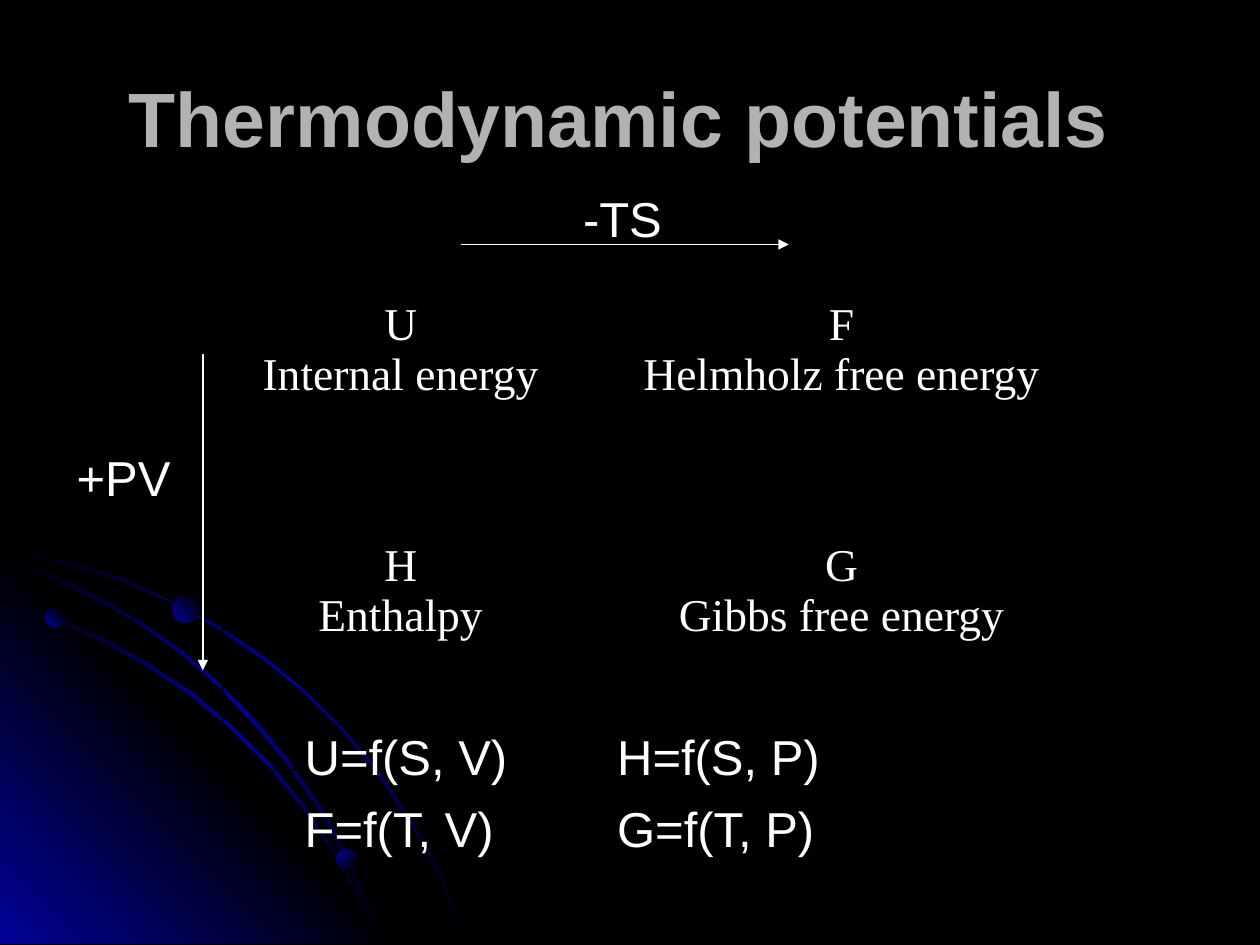
from lxml import etree
from pptx import Presentation
from pptx import util as u
from pptx.dml.color import RGBColor
from pptx.enum import shapes, text
from pptx.oxml import parse_xml
from pptx.oxml.ns import nsdecls, qn

COLUMNS, ROWS = 100, 75
CELL = u.Inches(0.1)
FINE = CELL // 10  # outline points are given in tenths of a grid cell

BLACK, WHITE, GREY, BLUE = "000000", "FFFFFF", "B2B2B2", "010199"
SANS, SERIF = "Arial", "Times New Roman"

OUTER_ARC = [
    (57, 447), (28, 441), (0, 435), (0, 438), (28, 443), (56, 449), (97, 461), (135, 478),
    (173, 499), (208, 523), (241, 549), (271, 579), (298, 612), (323, 649), (337, 673),
    (350, 698), (360, 723), (370, 749), (372, 749), (362, 723), (352, 698), (339, 673),
    (325, 648), (300, 611), (272, 578), (242, 548), (209, 521), (174, 497), (136, 477),
    (98, 459)]
CORNER_GLOW = [(322, 749), (0, 749), (0, 427)]
INNER_ARC = [
    (285, 714), (294, 732), (301, 749), (303, 749), (296, 730), (286, 712), (266, 676),
    (242, 640), (215, 606), (184, 576), (152, 549), (117, 526), (79, 505), (41, 488),
    (0, 475), (0, 477), (39, 490), (77, 507), (115, 528), (150, 551), (183, 578),
    (213, 608), (240, 641), (265, 677)]
MIDDLE_ARC = [
    (0, 442), (0, 444), (36, 457), (74, 475), (109, 494), (142, 518), (173, 544), (202, 575),
    (227, 605), (252, 641), (267, 667), (280, 694), (292, 722), (301, 749), (303, 749),
    (294, 720), (282, 693), (269, 665), (254, 639), (229, 603), (204, 573), (175, 543),
    (144, 516), (111, 493), (76, 473), (39, 455)]


def color(value):
    return RGBColor.from_string(value)


def grid(*lengths):
    return [round(length * CELL) for length in lengths]


class Slide:
    """The deck's style and its current page; lengths are in grid cells."""

    def __init__(self, background):
        self.deck = Presentation()
        self.deck.slide_width, self.deck.slide_height = grid(COLUMNS, ROWS)
        self.page = self.deck.slides.add_slide(self.deck.slide_layouts[6])
        fill = self.page.background.fill
        fill.solid()
        fill.fore_color.rgb = color(background)

    def shade(self, shape, colors, angle):
        """Fill with evenly spaced colours; the angle runs clockwise."""
        step = 100000 // (len(colors) - 1)
        stops = "".join(f'<a:gs pos="{i * step}"><a:srgbClr val="{c}"/></a:gs>'
                        for i, c in enumerate(colors))
        shape.shadow.inherit = False
        shape.line.fill.background()
        shape.fill.background()
        plain = shape._element.spPr.find(qn("a:noFill"))
        plain.getparent().replace(plain, parse_xml(
            f'<a:gradFill {nsdecls("a")}><a:gsLst>{stops}</a:gsLst>'
            f'<a:lin ang="{angle * 60000}" scaled="0"/></a:gradFill>'))

    def outline(self, points, colors, angle):
        builder = self.page.shapes.build_freeform(*points[0], scale=FINE)
        builder.add_line_segments(points[1:], close=True)
        self.shade(builder.convert_to_shape(), colors, angle)

    def dot(self, left, top, size, angle):
        shape = self.page.shapes.add_shape(
            shapes.MSO_SHAPE.OVAL, *grid(left, top, size, size))
        self.shade(shape, [BLUE, BLACK], angle)

    def set_lines(self, frame, lines, font, size, ink=WHITE, bold=False, centred=False):
        frame.text = "\n".join(lines)
        for para in frame.paragraphs:
            para.alignment = text.PP_ALIGN.CENTER if centred else text.PP_ALIGN.LEFT
            for span in para.runs:
                span.font.name, span.font.size = font, u.Pt(size)
                span.font.bold, span.font.color.rgb = bold, color(ink)

    def label(self, place, lines, size=28, middle=False, **style):
        frame = self.page.shapes.add_textbox(*grid(*place)).text_frame
        frame.word_wrap = True
        if middle:
            frame.vertical_anchor = text.MSO_ANCHOR.MIDDLE
        self.set_lines(frame, lines, SANS, size, **style)
        return frame

    def tabbed(self, place, rows, tab, gap):
        """Lines of text in columns, the second one starting at a tab stop."""
        frame = self.label(place, ["\t".join(row) for row in rows])
        for index, para in enumerate(frame.paragraphs):
            if index:
                para.space_before = u.Pt(gap)
            stops = etree.SubElement(para._p.get_or_add_pPr(), qn("a:tabLst"))
            etree.SubElement(stops, qn("a:tab"), pos=str(grid(tab)[0]), algn="l")

    def arrow(self, *ends):
        line = self.page.shapes.add_connector(shapes.MSO_CONNECTOR.STRAIGHT, *grid(*ends))
        line.line.color.rgb, line.line.width = color(WHITE), u.Pt(1)
        properties = line._element.spPr
        etree.SubElement(properties.find(qn("a:ln")), qn("a:tailEnd"), type="triangle")
        etree.SubElement(properties, qn("a:effectLst"))

    def table(self, left, top, widths, heights, content):
        frame = self.page.shapes.add_table(
            len(heights), len(widths), *grid(left, top, sum(widths), sum(heights)))
        table = frame.table
        table.first_row = table.horz_banding = False
        for column, width in zip(table.columns, grid(*widths)):
            column.width = width
        for row, height, entries in zip(table.rows, grid(*heights), content):
            row.height = height
            for cell, lines in zip(row.cells, entries):
                self.set_lines(cell.text_frame, lines, SERIF, 26, centred=True)
                cell.fill.background()
                self.border(cell)

    def border(self, cell):
        properties = cell._tc.get_or_add_tcPr()
        for index, side in enumerate("LRTB"):
            properties.insert(index, parse_xml(
                f'<a:ln{side} {nsdecls("a")} w="{u.Pt(1)}"><a:solidFill>'
                f'<a:srgbClr val="{BLACK}"/></a:solidFill></a:ln{side}>'))


def main():
    slide = Slide(BLACK)

    band = [BLACK, BLUE, BLACK]
    slide.outline(OUTER_ARC, band, 45)
    slide.outline(CORNER_GLOW, [BLUE, BLACK, BLUE], 315)
    slide.outline(INNER_ARC, band, 45)
    slide.outline(MIDDLE_ARC, band, 45)
    slide.dot(3.6, 48.3, 1.5, 315)
    slide.dot(26.7, 67.4, 1.6, 45)
    slide.dot(13.7, 47.3, 2.1, 315)

    slide.label((5, 3, 90, 12.5), ["Thermodynamic potentials "], size=44,
                middle=True, ink=GREY, bold=True, centred=True)
    slide.table(17.7, 23.3, [28.2, 41.8], [19.1, 18.7], [
        [["U", "Internal energy"], ["F", "Helmholz free energy"]],
        [["H", "Enthalpy"], ["G", "Gibbs free energy"]]])
    slide.arrow(36.6, 19.4, 62.6, 19.4)
    slide.arrow(16.1, 28.1, 16.1, 53.2)
    slide.label((5.1, 35, 11, 5.7), ["+PV"])
    slide.label((45.3, 14.5, 15.7, 5.7), ["-TS"])
    slide.tabbed((23.2, 57.2, 55.9, 14.2), [
        ["U=f(S, V)", "H=f(S, P)"],
        ["F=f(T, V)", "G=f(T, P)"]], tab=24.8, gap=7)

    slide.deck.save("out.pptx")


if __name__ == "__main__":
    main()
